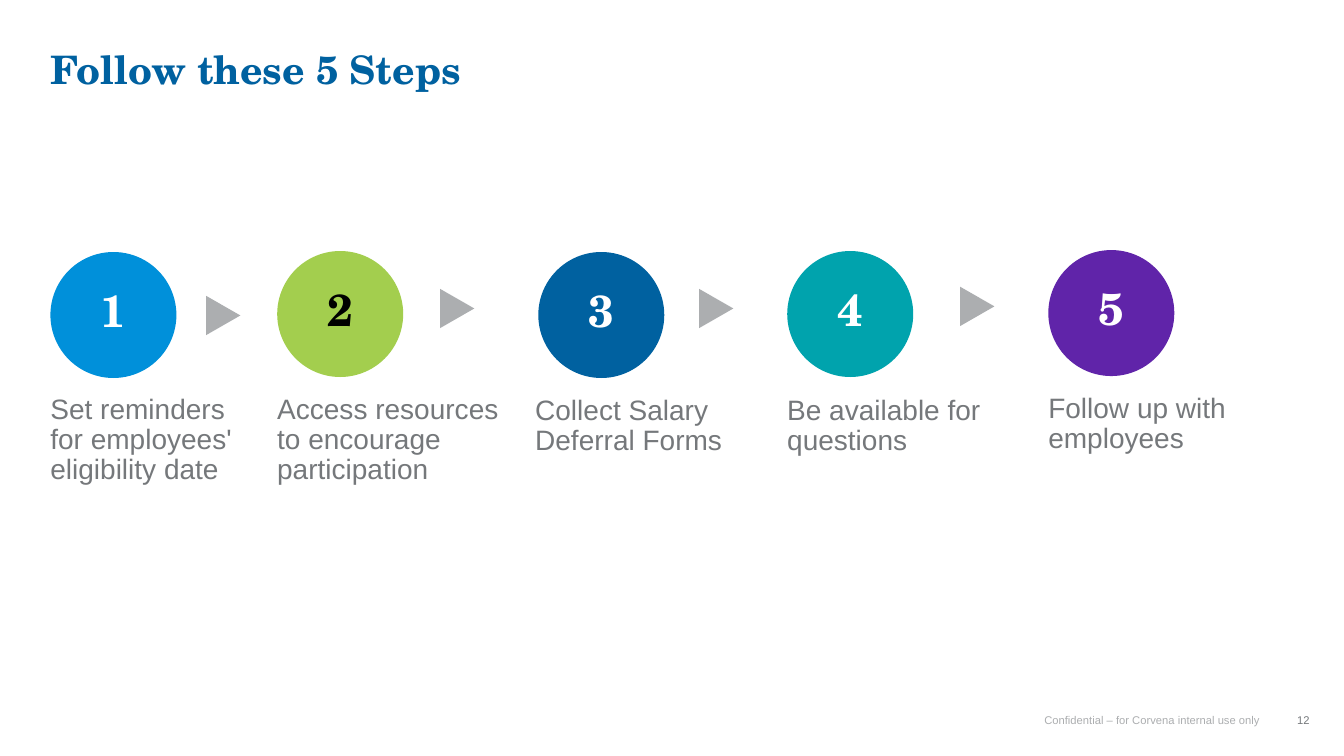
import pptx
import pptx.util
import pptx.dml.color
import pptx.enum.shapes
import pptx.enum.text

Pt = pptx.util.Pt
SHAPES = pptx.enum.shapes.MSO_SHAPE
ALIGN = pptx.enum.text.PP_ALIGN
ANCHOR = pptx.enum.text.MSO_ANCHOR

HEADING_FONT = "TeX Gyre Schola"
BODY_FONT = "Arial"
COLORS = {
    "white": "FFFFFF",
    "black": "000000",
    "gray": "75787B",
    "light_gray": "ACAEB0",
    "sky": "0090DA",
    "green": "A3CE4E",
    "blue": "0061A0",
    "teal": "00A3AD",
    "purple": "6024A9",
}
CIRCLE_SIZE = 90
LABEL_HEIGHT = 84.2
ARROW_WIDTH, ARROW_HEIGHT = 28.1, 24.5

STEPS = [
    (36, 180, "sky", "white", 36, 282.2, 148.3, "Set reminders for employees' eligibility date"),
    (198, 179.3, "green", "black", 198, 282.2, 158.4, "Access resources to encourage participation"),
    (384.5, 180, "blue", "white", 382.3, 283, 148.3, "Collect Salary Deferral Forms"),
    (562.3, 179.3, "teal", "white", 562.3, 283, 148.3, "Be available for questions"),
    (748.8, 178.6, "purple", "white", 748.8, 281.5, 148.3, "Follow up with employees"),
]
ARROWS = [(145.4, 213.1), (312.5, 208.1), (497.5, 208.1), (684, 206.6)]


def rgb(name):
    return pptx.dml.color.RGBColor.from_string(COLORS[name])


def write_text(shape, text, size, color, font=BODY_FONT, bold=False,
               align=ALIGN.LEFT, anchor=ANCHOR.TOP, spacing=0.9, side_margin=0):
    frame = shape.text_frame
    frame.word_wrap = True
    frame.auto_size = pptx.enum.text.MSO_AUTO_SIZE.NONE
    frame.vertical_anchor = anchor
    frame.margin_top = frame.margin_bottom = 0
    frame.margin_left = frame.margin_right = Pt(side_margin)
    paragraph = frame.paragraphs[0]
    paragraph.alignment = align
    paragraph.line_spacing = spacing
    paragraph.space_before = Pt(0)
    run = paragraph.add_run()
    run.text = text
    run.font.name = font
    run.font.size = Pt(size)
    run.font.bold = bold
    run.font.color.rgb = rgb(color)


def add_title(slide, text):
    title = slide.shapes.title
    title.left, title.top, title.width, title.height = Pt(36), Pt(36), Pt(744.5), Pt(57.6)
    write_text(title, text, 28, "blue", HEADING_FONT, True)


def add_text(slide, left, top, width, height, text, size, color, **options):
    box = slide.shapes.add_textbox(Pt(left), Pt(top), Pt(width), Pt(height))
    write_text(box, text, size, color, **options)


def add_filled_shape(slide, kind, left, top, width, height, color):
    shape = slide.shapes.add_shape(kind, Pt(left), Pt(top), Pt(width), Pt(height))
    shape.shadow.inherit = False
    shape.fill.solid()
    shape.fill.fore_color.rgb = rgb(color)
    shape.line.fill.background()
    return shape


def add_number_circle(slide, left, top, number, fill, color):
    circle = add_filled_shape(slide, SHAPES.OVAL, left, top, CIRCLE_SIZE, CIRCLE_SIZE, fill)
    write_text(circle, str(number), 32, color, HEADING_FONT, True,
               ALIGN.CENTER, ANCHOR.MIDDLE, 0.8)


def add_arrow(slide, left, top):
    arrow = add_filled_shape(slide, SHAPES.ISOSCELES_TRIANGLE, left, top,
                             ARROW_WIDTH, ARROW_HEIGHT, "light_gray")
    arrow.rotation = 90


def main():
    presentation = pptx.Presentation()
    presentation.slide_width, presentation.slide_height = Pt(960), Pt(540)
    slide = presentation.slides.add_slide(presentation.slide_layouts[5])
    add_title(slide, "Follow these 5 Steps")
    for number, step in enumerate(STEPS, 1):
        left, top, fill, color, label_left, label_top, label_width, label = step
        add_number_circle(slide, left, top, number, fill, color)
        add_text(slide, label_left, label_top, label_width, LABEL_HEIGHT, label, 20, "gray")
    for left, top in ARROWS:
        add_arrow(slide, left, top)
    add_text(slide, 720, 510.5, 187.2, 16.6, "Confidential – for Corvena internal use only",
             8, "light_gray", align=ALIGN.RIGHT, side_margin=7.2)
    add_text(slide, 902.2, 505.4, 57.6, 18, "12", 8, "gray",
             align=ALIGN.CENTER, anchor=ANCHOR.MIDDLE, spacing=1)
    presentation.save("out.pptx")


if __name__ == "__main__":
    main()
